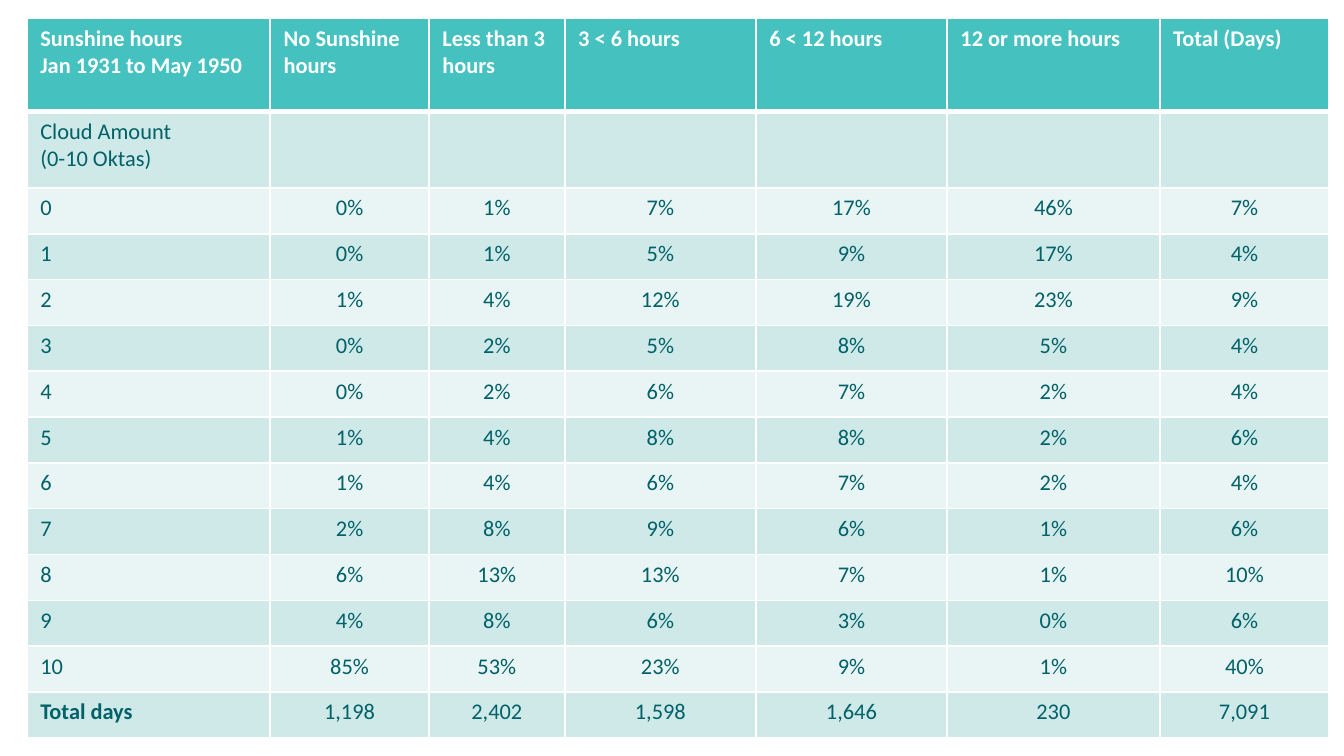
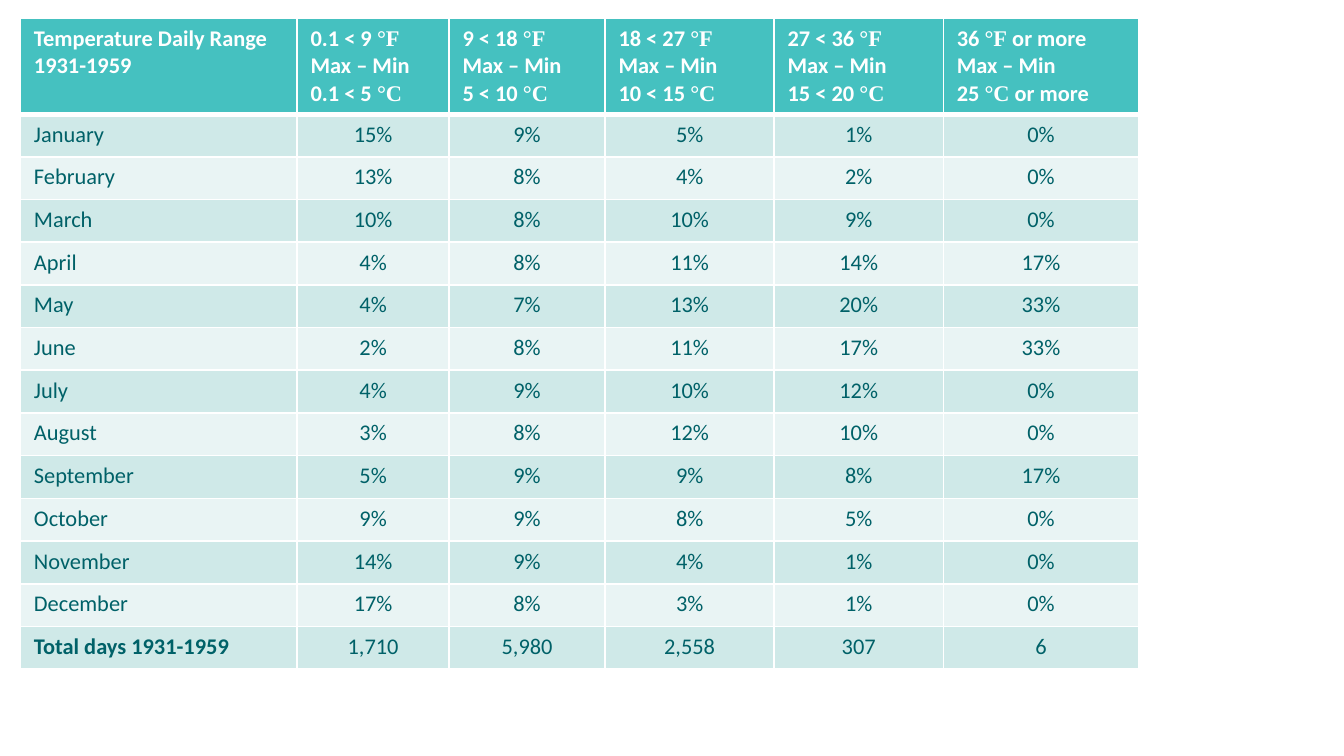
from lxml import etree
from pptx import Presentation
from pptx.dml.color import RGBColor
from pptx.enum.text import PP_ALIGN
from pptx.oxml.ns import qn
from pptx.util import Pt

CENTER, LEFT = PP_ALIGN.CENTER, PP_ALIGN.LEFT
FONT, DEGREE_FONT = "Calibri", "Times New Roman"
TEAL, DARK_TEAL, WHITE = "45C1C0", "006168", "FFFFFF"
BANDS = ("CFE9E8", "E9F4F4")
THIN, THICK = 1, 3
BLANK_LAYOUT = 6

# Sunshine table: header, then one row for each cloud amount
SUNSHINE_HEADER = ["Sunshine hours\nJan 1931 to May 1950", "No Sunshine hours",
                   "Less than 3 hours", "3 < 6 hours", "6 < 12 hours",
                   "12 or more hours", "Total (Days)"]
CLOUD_SHARES = [
    (0, 1, 7, 17, 46, 7),
    (0, 1, 5, 9, 17, 4),
    (1, 4, 12, 19, 23, 9),
    (0, 2, 5, 8, 5, 4),
    (0, 2, 6, 7, 2, 4),
    (1, 4, 8, 8, 2, 6),
    (1, 4, 6, 7, 2, 4),
    (2, 8, 9, 6, 1, 6),
    (6, 13, 13, 7, 1, 10),
    (4, 8, 6, 3, 0, 6),
    (85, 53, 23, 9, 1, 40),
]
SUNSHINE_TOTALS = ["Total days", "1,198", "2,402", "1,598", "1,646", "230", "7,091"]

# Temperature table: ranges in °F and °C, then one row for each month
TEMPERATURE_RANGES = [("0.1 < 9 °F", "0.1 < 5 °C"), ("9 < 18 °F", "5 < 10 °C"),
                      ("18 < 27 °F", "10 < 15 °C"), ("27 < 36 °F", "15 < 20 °C"),
                      ("36 °F or more", "25 °C or more")]
MONTH_SHARES = {
    "January": (15, 9, 5, 1, 0),
    "February": (13, 8, 4, 2, 0),
    "March": (10, 8, 10, 9, 0),
    "April": (4, 8, 11, 14, 17),
    "May": (4, 7, 13, 20, 33),
    "June": (2, 8, 11, 17, 33),
    "July": (4, 9, 10, 12, 0),
    "August": (3, 8, 12, 10, 0),
    "September": (5, 9, 9, 8, 17),
    "October": (9, 9, 8, 5, 0),
    "November": (14, 9, 4, 1, 0),
    "December": (17, 8, 3, 1, 0),
}
TEMPERATURE_TOTALS = ["Total days 1931-1959", "1,710", "5,980", "2,558", "307", "6"]


def color(hex_string):
    return RGBColor.from_string(hex_string)


def split_degrees(line):
    """Split a line into (text, font) parts, with degree units in their own font."""
    for unit in ("°F", "°C"):
        if unit in line:
            before, after = line.split(unit)
            return [(before, FONT), (unit, DEGREE_FONT), (after, FONT)]
    return [(line, FONT)]


def write_text(text_frame, text, *, size=12, ink=DARK_TEAL, bold=False, align=LEFT):
    """Write text; \\n starts a paragraph and \\v breaks a line."""
    for index, paragraph_text in enumerate(text.split("\n")):
        paragraph = text_frame.add_paragraph() if index else text_frame.paragraphs[0]
        paragraph.alignment = align
        for line_number, line in enumerate(paragraph_text.split("\v")):
            if line_number:
                paragraph.add_line_break()
            for part, font_name in split_degrees(line):
                if not part:
                    continue
                run = paragraph.add_run()
                run.text = part
                run.font.name = font_name
                run.font.size = Pt(size)
                run.font.bold = bold
                run.font.color.rgb = color(ink)


def set_borders(cell, *, top=THIN, bottom=THIN):
    properties = cell._tc.get_or_add_tcPr()
    for side, width in (("L", THIN), ("R", THIN), ("T", top), ("B", bottom)):
        line = etree.SubElement(properties, qn(f"a:ln{side}"), w=str(Pt(width)))
        fill = etree.SubElement(line, qn("a:solidFill"))
        etree.SubElement(fill, qn("a:srgbClr"), val=WHITE)


def fill_cell(cell, fill):
    cell.fill.solid()
    cell.fill.fore_color.rgb = color(fill)


def add_data_table(slide, rows, *, left, top, widths, heights):
    """Add a table with a header row, banded body rows and a bold last label."""
    frame = slide.shapes.add_table(len(rows), len(widths), Pt(left), Pt(top),
                                   Pt(sum(widths)), Pt(sum(heights)))
    table = frame.table
    for column, width in zip(table.columns, widths):
        column.width = Pt(width)
    for row, height in zip(table.rows, heights):
        row.height = Pt(height)

    for row_index, row in enumerate(rows):
        is_header = row_index == 0
        is_total = row_index == len(rows) - 1
        for column_index, text in enumerate(row):
            cell = table.cell(row_index, column_index)
            is_label = column_index == 0
            set_borders(cell, top=THICK if row_index == 1 else THIN,
                        bottom=THICK if is_header else THIN)
            fill_cell(cell, TEAL if is_header else BANDS[(row_index - 1) % 2])
            write_text(cell.text_frame, text,
                       ink=WHITE if is_header else DARK_TEAL,
                       bold=is_header or (is_total and is_label),
                       align=LEFT if is_header or is_label else CENTER)


def percent_row(label, shares):
    return [str(label)] + [f"{share}%" for share in shares]


def add_sunshine_slide(presentation):
    slide = presentation.slides.add_slide(presentation.slide_layouts[BLANK_LAYOUT])
    cloud_heading = ["Cloud Amount\n(0-10 Oktas)"] + [""] * 6
    cloud_rows = [percent_row(amount, shares) for amount, shares in enumerate(CLOUD_SHARES)]
    rows = [SUNSHINE_HEADER, cloud_heading, *cloud_rows, SUNSHINE_TOTALS]
    add_data_table(slide, rows, left=14.4, top=10,
                   widths=[130.4, 85, 72.8, 102.4, 102.4, 114, 90.7],
                   heights=[49.5, 41.2] + [24.55] * 12)


def add_temperature_slide(presentation):
    slide = presentation.slides.add_slide(presentation.slide_layouts[BLANK_LAYOUT])
    header = ["Temperature Daily Range 1931-1959"]
    header += [f"{fahrenheit}\vMax – Min\n{celsius}"
               for fahrenheit, celsius in TEMPERATURE_RANGES]
    month_rows = [percent_row(month, shares) for month, shares in MONTH_SHARES.items()]
    add_data_table(slide, [header, *month_rows, TEMPERATURE_TOTALS], left=11, top=10,
                   widths=[148.2, 81.4, 83.6, 90.6, 90.6, 104.6],
                   heights=[49] + [22.9] * 13)


def main():
    presentation = Presentation()
    presentation.slide_width = Pt(720)
    presentation.slide_height = Pt(405)
    add_sunshine_slide(presentation)
    add_temperature_slide(presentation)
    presentation.save("out.pptx")


if __name__ == "__main__":
    main()
